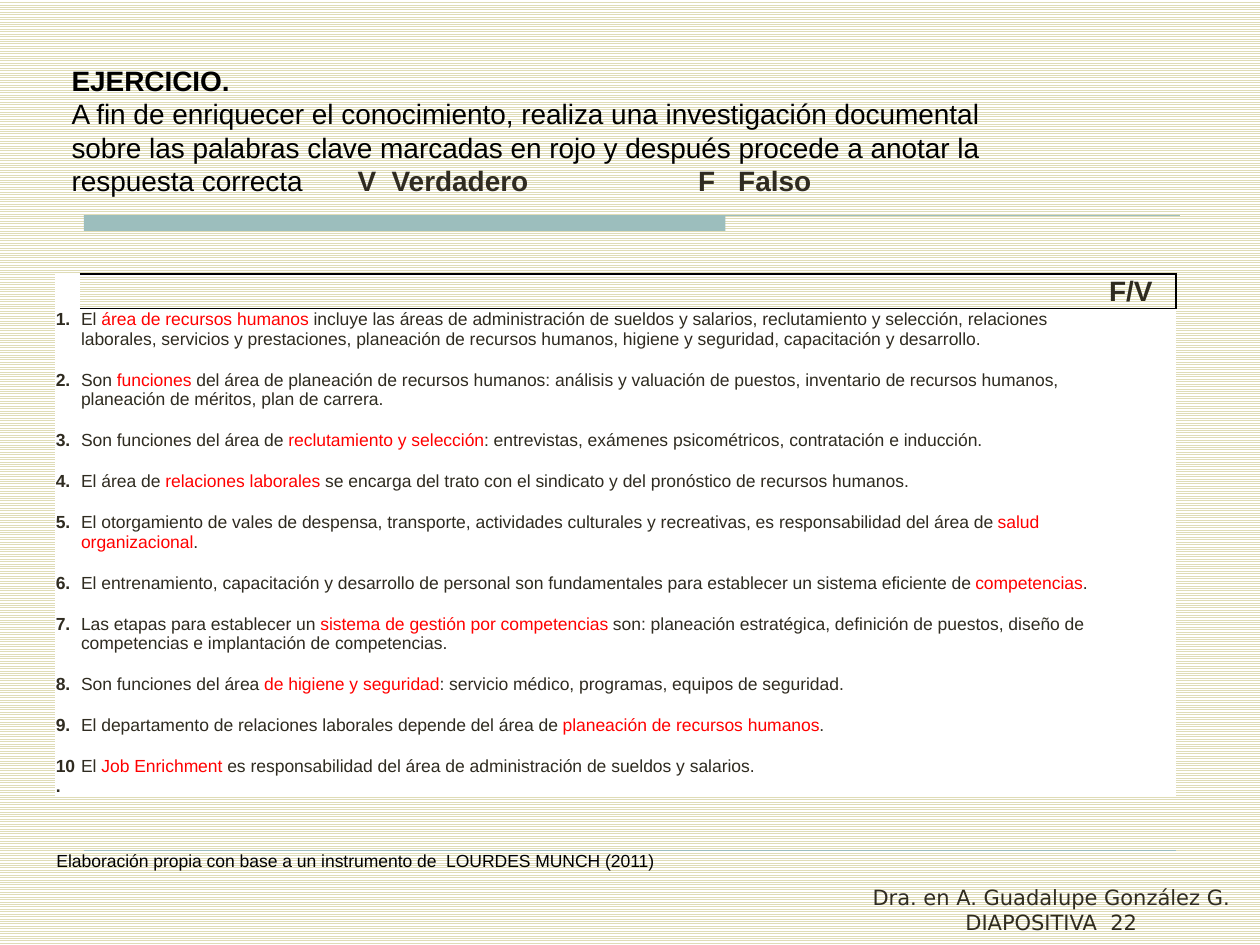
from lxml import etree
from pptx import Presentation
from pptx.dml.color import RGBColor
from pptx.enum.dml import MSO_PATTERN
from pptx.enum.shapes import MSO_CONNECTOR, MSO_SHAPE
from pptx.enum.text import MSO_ANCHOR, PP_ALIGN
from pptx.oxml.ns import qn
from pptx.util import Pt

STRAIGHT = MSO_CONNECTOR.STRAIGHT
RECTANGLE = MSO_SHAPE.RECTANGLE
LIGHT_HORIZONTAL = MSO_PATTERN.LIGHT_HORIZONTAL
MIDDLE = MSO_ANCHOR.MIDDLE
LEFT, CENTER = PP_ALIGN.LEFT, PP_ALIGN.CENTER

BLACK, WHITE, INK, RED = "000000", "FFFFFF", "2F2B20", "FF0000"
SAND, TEAL = "DFDCB7", "9CBEBD"
COLUMNS = [14.4, 586.8, 39.6]
HEADER_HEIGHT, ONE_LINE, TWO_LINES = 20, 23.5, 34.5

STATEMENTS = [
    (TWO_LINES, "El ", "área de recursos humanos ",
     "incluye las áreas de administración de sueldos y salarios, reclutamiento y selección, "
     "relaciones laborales, servicios y prestaciones, planeación de recursos humanos, "
     "higiene y seguridad, capacitación y desarrollo."),
    (TWO_LINES, "Son ", "funciones",
     " del área de planeación de recursos humanos: análisis y valuación de puestos, "
     "inventario de recursos humanos, planeación de méritos, plan de carrera."),
    (ONE_LINE, "Son funciones del área de ", "reclutamiento y selección",
     ": entrevistas, exámenes psicométricos, contratación e inducción."),
    (ONE_LINE, "El área de ", "relaciones laborales ",
     "se encarga del trato con el sindicato y del pronóstico de recursos humanos."),
    (TWO_LINES, "El otorgamiento de vales de despensa, transporte, actividades culturales y "
     "recreativas, es responsabilidad del área de ", "salud organizacional", "."),
    (ONE_LINE, "El entrenamiento, capacitación y desarrollo de personal son fundamentales para "
     "establecer un sistema eficiente de ", "competencias", "."),
    (TWO_LINES, "Las etapas para establecer un ", "sistema de gestión por competencias ",
     "son: planeación estratégica, definición de puestos, diseño de competencias e "
     "implantación de competencias."),
    (ONE_LINE, "Son funciones del área ", "de higiene y seguridad",
     ": servicio médico, programas, equipos de seguridad."),
    (ONE_LINE, "El departamento de relaciones laborales depende del área de ",
     "planeación de recursos humanos", "."),
    (ONE_LINE, "El ", "Job Enrichment ",
     "es responsabilidad del área de administración de sueldos y salarios."),
]


def rgb(value):
    """Turn a hex string into a colour."""
    return RGBColor.from_string(value)


def write(p, runs, size, font="Arial", align=LEFT):
    """Fill a paragraph with (text, colour, bold) runs."""
    p.alignment = align
    p.font.size, p.font.name = Pt(size), font
    for text, color, bold in runs:
        r = p.add_run()
        r.text = text
        r.font.color.rgb = rgb(color)
        r.font.bold = bold


def add_tabs(p, positions):
    """Give a paragraph left tab stops."""
    tabs = etree.Element(qn("a:tabLst"))
    for position in positions:
        etree.SubElement(tabs, qn("a:tab"), pos=str(Pt(position)), algn="l")
    p._p.get_or_add_pPr().insert(0, tabs)


def add_text(s, x, y, w, h):
    """Add a wrapping text box and return its frame."""
    tf = s.shapes.add_textbox(Pt(x), Pt(y), Pt(w), Pt(h)).text_frame
    tf.word_wrap = True
    return tf


def add_line(s, x1, x2, y, width):
    """Draw a horizontal teal rule."""
    line = s.shapes.add_connector(STRAIGHT, Pt(x1), Pt(y), Pt(x2), Pt(y))
    line.line.color.rgb = rgb(TEAL)
    line.line.width = Pt(width)
    etree.SubElement(line._element.spPr, qn("a:effectLst"))


def add_bar(s, x, y, w, h):
    """Draw the solid teal bar."""
    sp = s.shapes.add_shape(RECTANGLE, Pt(x), Pt(y), Pt(w), Pt(h))
    sp.shadow.inherit = False
    sp.fill.solid()
    sp.fill.fore_color.rgb = rgb(TEAL)
    sp.line.fill.background()


def style_cell(cell, margin, fill=None, borders=None):
    """Set the margins, borders by side and fill of a cell."""
    cell.margin_left = cell.margin_right = Pt(margin)
    cell.margin_top = cell.margin_bottom = Pt(0.7)
    tc_pr = cell._tc.get_or_add_tcPr()
    for side in "LRTB":
        width = (borders or {}).get(side, 0)
        ln = etree.SubElement(tc_pr, qn(f"a:ln{side}"), w=str(Pt(width)))
        if width:
            solid = etree.SubElement(ln, qn("a:solidFill"))
            etree.SubElement(solid, qn("a:srgbClr"), val=BLACK)
        else:
            etree.SubElement(ln, qn("a:noFill"))
    if fill:
        cell.fill.solid()
        cell.fill.fore_color.rgb = rgb(fill)
    else:
        cell.fill.background()


def add_exercise(s, x, y):
    """Add the table of true or false statements."""
    heights = [HEADER_HEIGHT] + [row[0] for row in STATEMENTS]
    frame = s.shapes.add_table(len(heights), len(COLUMNS), Pt(x), Pt(y),
                               Pt(sum(COLUMNS)), Pt(sum(heights)))
    table = frame.table
    table.first_row = table.horz_banding = False
    for column, width in zip(table.columns, COLUMNS):
        column.width = Pt(width)
    for row, height in zip(table.rows, heights):
        row.height = Pt(height)

    corner, blank, answer = table.rows[0].cells
    style_cell(corner, 0.7, WHITE)
    style_cell(blank, 1.4, borders={"T": 1.5, "B": 0.75})
    style_cell(answer, 1.4, borders={"T": 1.5, "B": 0.75, "R": 0.75})
    answer.vertical_anchor = MIDDLE
    write(corner.text_frame.paragraphs[0], [], 10)
    write(blank.text_frame.paragraphs[0], [], 10)
    write(answer.text_frame.paragraphs[0], [("F/V", INK, True)], 16)

    for number, (_, before, key, after) in enumerate(STATEMENTS, 1):
        contents = [
            [(f"{number}.", INK, True)],
            [(before, INK, False), (key, RED, False), (after, INK, False)],
            [],
        ]
        for cell, runs in zip(table.rows[number].cells, contents):
            style_cell(cell, 0.7, WHITE)
            write(cell.text_frame.paragraphs[0], runs, 10)


def add_instructions(s):
    """Add the heading and the instructions with the answer key."""
    tf = add_text(s, 33.8, 32.5, 555.8, 86)
    write(tf.paragraphs[0], [("EJERCICIO.", BLACK, True)], 16)
    p = tf.add_paragraph()
    write(p, [
        ("A fin de enriquecer el conocimiento, realiza una investigación documental sobre las "
         "palabras clave marcadas en rojo y después procede a anotar la respuesta correcta",
         BLACK, False),
        ("\tV  Verdadero\tF   Falso", INK, True),
    ], 16)
    add_tabs(p, [163.5, 358])


def main():
    """Build the slide and save it."""
    prs = Presentation()
    prs.slide_width, prs.slide_height = Pt(720), Pt(540)
    s = prs.slides.add_slide(prs.slide_layouts[6])
    fill = s.background.fill
    fill.patterned()
    fill.pattern = LIGHT_HORIZONTAL
    fill.fore_color.rgb, fill.back_color.rgb = rgb(SAND), rgb(WHITE)

    add_bar(s, 48, 123, 366.5, 9)
    add_line(s, 48, 674.5, 123, 0.75)
    add_line(s, 48, 672, 486, 0.25)
    add_exercise(s, 31.2, 156.5)
    source = add_text(s, 25.2, 482.4, 357, 37.5)
    write(source.paragraphs[0],
          [("Elaboración propia con base a un instrumento de  LOURDES MUNCH (2011)", BLACK, False)], 10)
    add_instructions(s)
    author = add_text(s, 486.7, 501.8, 228.2, 37.5)
    write(author.paragraphs[0],
          [("Dra. en A. Guadalupe González G. DIAPOSITIVA  22", INK, False)], 12, "DejaVu Sans", CENTER)
    prs.save("out.pptx")


if __name__ == "__main__":
    main()
